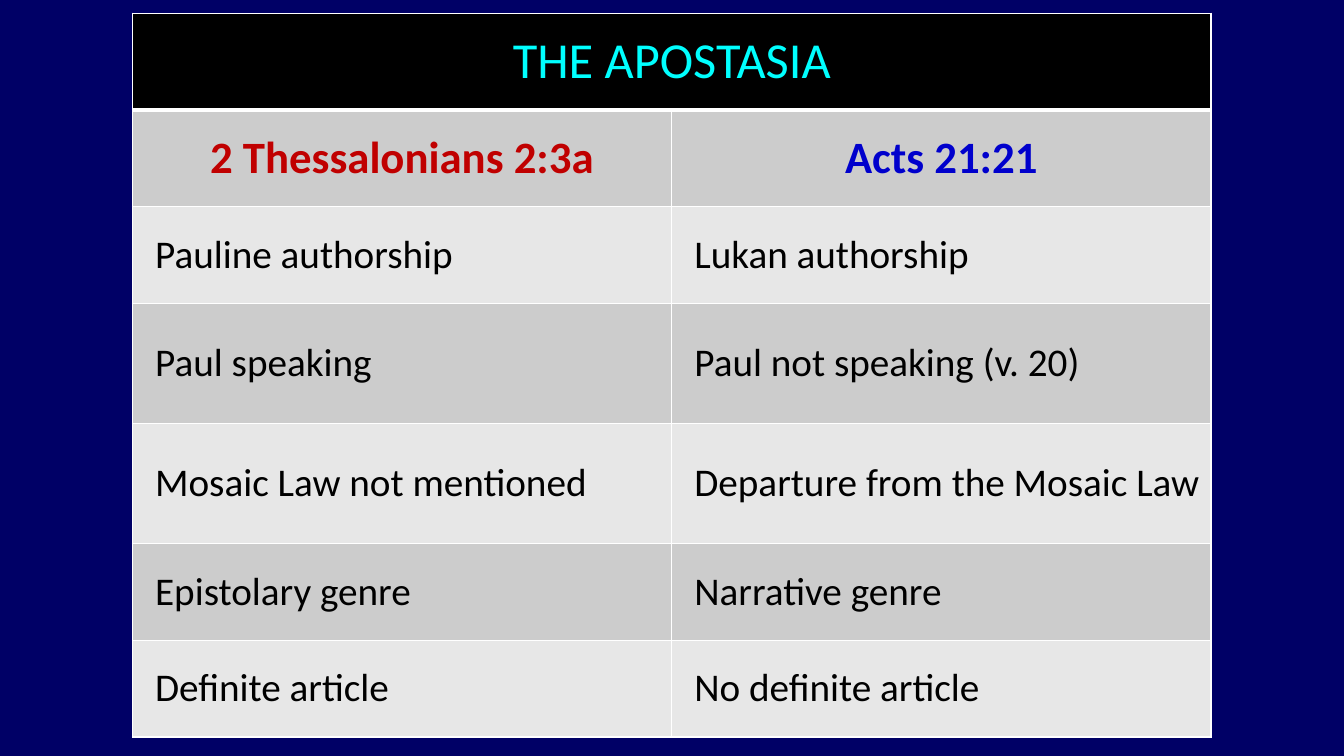
from lxml import etree
from pptx import Presentation
from pptx.dml.color import RGBColor
from pptx.enum.text import MSO_ANCHOR, PP_ALIGN
from pptx.oxml.ns import qn
from pptx.util import Cm, Pt

CENTER, LEFT = PP_ALIGN.CENTER, PP_ALIGN.LEFT
MIDDLE = MSO_ANCHOR.MIDDLE
BLANK_LAYOUT = 6

COLORS = {
    "navy": "000066",
    "black": "000000",
    "white": "FFFFFF",
    "cyan": "00FFFF",
    "red": "C00000",
    "blue": "0000CC",
    "dark_band": "CCCCCC",
    "light_band": "E7E7E7",
}

HEADING = "THE APOSTASIA"
PASSAGES = [("2 Thessalonians 2:3a", "red"), ("Acts 21:21", "blue")]
CONTRASTS = [
    ("Pauline authorship", "Lukan authorship"),
    ("Paul speaking", "Paul not speaking (v. 20)"),
    ("Mosaic Law not mentioned", "Departure from the Mosaic Law"),
    ("Epistolary genre", "Narrative genre"),
    ("Definite article", "No definite article"),
]
COLUMN_WIDTH = 13.59
ROW_HEIGHTS = [2.44, 2.44, 2.44, 3.02, 3.02, 2.44, 2.44]


class SlideBuilder:
    font = "Calibri"

    def __init__(self, slide):
        self.slide = slide

    def color(self, name):
        return RGBColor.from_string(COLORS[name])

    def background(self, name):
        fill = self.slide.background.fill
        fill.solid()
        fill.fore_color.rgb = self.color(name)

    def table(self, left, top, column_widths, row_heights):
        table = self.slide.shapes.add_table(
            len(row_heights), len(column_widths), Cm(left), Cm(top),
            Cm(sum(column_widths)), Cm(sum(row_heights))).table
        for column, width in zip(table.columns, column_widths):
            column.width = Cm(width)
        for row, height in zip(table.rows, row_heights):
            row.height = Cm(height)
        return table

    def cell(self, cell, text, size, color, fill, bold=False,
             align=CENTER, indent=0, bottom=1):
        cell.fill.solid()
        cell.fill.fore_color.rgb = self.color(fill)
        cell.vertical_anchor = MIDDLE
        cell.margin_right = Cm(0.15)
        cell.margin_left = Cm(0.15 if align == CENTER else 0.25)
        self.borders(cell, bottom)
        cell.text_frame.text = text
        paragraph = cell.text_frame.paragraphs[0]
        paragraph.alignment = align
        properties = paragraph._p.get_or_add_pPr()
        properties.set("marL", str(Cm(indent)))
        properties.set("indent", "0")
        font = paragraph.runs[0].font
        font.name, font.size, font.bold = self.font, Pt(size), bold
        font.color.rgb = self.color(color)

    def borders(self, cell, bottom):
        properties = cell._tc.get_or_add_tcPr()
        for index, (side, width) in enumerate(
                [("L", 1), ("R", 1), ("T", 1), ("B", bottom)]):
            line = etree.Element(qn(f"a:ln{side}"), w=str(Pt(width)))
            solid = etree.SubElement(line, qn("a:solidFill"))
            etree.SubElement(solid, qn("a:srgbClr"), val=COLORS["white"])
            properties.insert(index, line)


def main():
    presentation = Presentation()
    presentation.slide_width, presentation.slide_height = Cm(33.87), Cm(19.05)
    layout = presentation.slide_layouts[BLANK_LAYOUT]
    builder = SlideBuilder(presentation.slides.add_slide(layout))
    builder.background("navy")

    comparison = builder.table(3.34, 0.33, [COLUMN_WIDTH] * 2, ROW_HEIGHTS)
    heading = comparison.cell(0, 0)
    heading.merge(comparison.cell(0, 1))
    builder.cell(heading, HEADING, 36, "cyan", "black", bottom=3)
    builder.borders(comparison.cell(0, 1), 3)

    for column, (passage, color) in enumerate(PASSAGES):
        builder.cell(comparison.cell(1, column), passage, 32, color,
                     "dark_band", bold=True)
    for row, contrast in enumerate(CONTRASTS, start=2):
        band = "dark_band" if row % 2 else "light_band"
        for column, point in enumerate(contrast):
            builder.cell(comparison.cell(row, column), point, 28, "black",
                         band, align=LEFT, indent=0.32)

    presentation.save("out.pptx")


if __name__ == "__main__":
    main()
